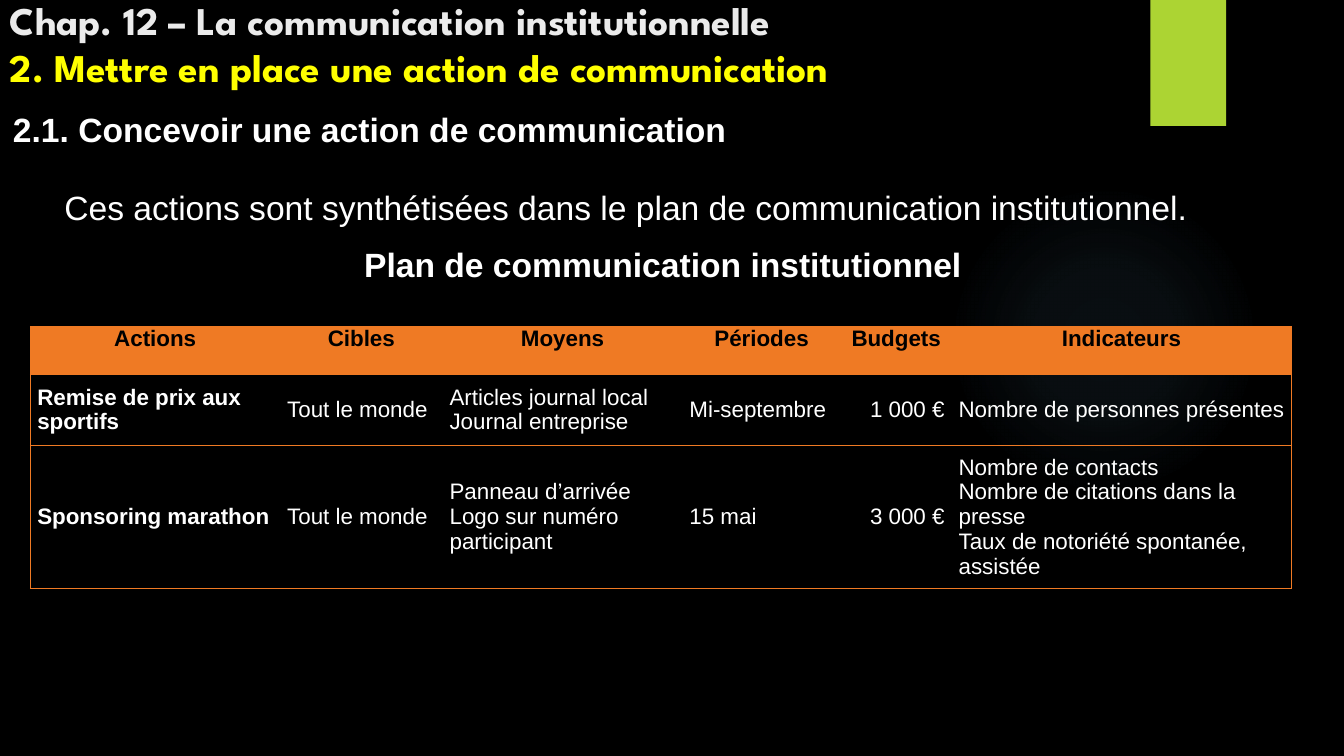
from lxml.etree import SubElement
from pptx import Presentation
from pptx.dml.color import RGBColor
from pptx.enum.shapes import MSO_SHAPE
from pptx.enum.text import MSO_ANCHOR, PP_ALIGN
from pptx.oxml import parse_xml
from pptx.oxml.ns import nsdecls, qn
from pptx.util import Inches, Pt

SLIDE_WIDTH, SLIDE_HEIGHT = Inches(13.33), Inches(7.5)
BLACK = RGBColor(0x00, 0x00, 0x00)
WHITE = RGBColor(0xFF, 0xFF, 0xFF)
PALE_GREY = RGBColor(0xEB, 0xEB, 0xEB)
YELLOW = RGBColor(0xFF, 0xFF, 0x00)
GREEN = RGBColor(0xAC, 0xD4, 0x33)
ORANGE = RGBColor(0xEF, 0x7A, 0x24)
GLOW_BLUE = RGBColor(0x7A, 0xC4, 0xF0)

GLOW_STOPS = [(0, 7), (36, 6), (69, 0)]
COLUMN_SHARES = [18.6, 12.08, 17.85, 11.78, 8.25, 25.28]
ROW_SHARES = [6.27, 9.47, 18.93]
BUDGET_COLUMN = 4
PLAN = [
    ["Actions", "Cibles", "Moyens", "Périodes", "Budgets", "Indicateurs"],
    ["Remise de prix aux sportifs", "Tout le monde",
     "Articles journal local\nJournal entreprise", "Mi-septembre", "1 000 €",
     "Nombre de personnes présentes"],
    ["Sponsoring marathon", "Tout le monde",
     "Panneau d’arrivée\nLogo sur numéro participant", "15 mai", "3 000 €",
     "Nombre de contacts\nNombre de citations dans la presse\n"
     "Taux de notoriété spontanée, assistée"],
]


def across(share):
    """Return a percentage of the slide's width."""
    return round(SLIDE_WIDTH * share / 100)


def down(share):
    """Return a percentage of the slide's height."""
    return round(SLIDE_HEIGHT * share / 100)


def area(left, top, width, height):
    """Turn shares of the slide into a position and a size."""
    return across(left), down(top), across(width), down(height)


def write(paragraph, text, size=24, font="Arial", color=WHITE, bold=False, align=PP_ALIGN.LEFT):
    """Add a formatted run to a paragraph."""
    paragraph.alignment = align
    run = paragraph.add_run()
    run.text = text
    run.font.size = Pt(size)
    run.font.name = font
    run.font.bold = bold
    run.font.color.rgb = color


def add_text_frame(slide, place, wrap=True, anchor=MSO_ANCHOR.TOP):
    """Add a text box and return its text frame."""
    text_frame = slide.shapes.add_textbox(*area(*place)).text_frame
    text_frame.word_wrap = wrap
    text_frame.vertical_anchor = anchor
    return text_frame


def add_plain_shape(slide, kind, place, color):
    """Add a filled shape with neither line nor shadow."""
    shape = slide.shapes.add_shape(kind, *area(*place))
    shape.shadow.inherit = False
    shape.line.fill.background()
    shape.fill.solid()
    shape.fill.fore_color.rgb = color
    return shape


def add_glow(slide):
    """Add the faint round glow."""
    shape = add_plain_shape(slide, MSO_SHAPE.OVAL, (70.59, 24.4, 23.11, 41.07), GLOW_BLUE)
    stops = "".join(
        f'<a:gs pos="{position * 1000}"><a:srgbClr val="{GLOW_BLUE}">'
        f'<a:alpha val="{alpha * 1000}"/></a:srgbClr></a:gs>'
        for position, alpha in GLOW_STOPS)
    gradient = parse_xml(
        f'<a:gradFill {nsdecls("a")}><a:gsLst>{stops}</a:gsLst><a:path path="circle">'
        '<a:fillToRect l="50000" t="50000" r="50000" b="50000"/></a:path></a:gradFill>')
    properties = shape.element.spPr
    properties.replace(properties.find(qn("a:solidFill")), gradient)


def set_borders(cell, visible_sides):
    """Draw the visible sides of a cell in orange and hide the others."""
    properties = cell._tc.get_or_add_tcPr()
    for side in "LRTB":
        line = SubElement(properties, qn(f"a:ln{side}"), w=str(Pt(0.75)))
        if side in visible_sides:
            fill = SubElement(line, qn("a:solidFill"))
            SubElement(fill, qn("a:srgbClr"), val=str(ORANGE))
        else:
            SubElement(line, qn("a:noFill"))


def fill_cell(cell, text, row, column):
    """Format one cell of the plan according to its row and column."""
    header = row == 0
    cell.margin_left = cell.margin_right = Inches(0.07)
    cell.margin_top = cell.margin_bottom = 0
    cell.vertical_anchor = MSO_ANCHOR.TOP if header else MSO_ANCHOR.MIDDLE
    left_side = "L" if column == 0 else ""
    right_side = "R" if column == len(COLUMN_SHARES) - 1 else ""
    set_borders(cell, left_side + right_side + ("T" if header else "TB"))
    if header:
        cell.fill.solid()
        cell.fill.fore_color.rgb = ORANGE
        align = PP_ALIGN.CENTER
    else:
        cell.fill.background()
        align = PP_ALIGN.RIGHT if column == BUDGET_COLUMN else PP_ALIGN.LEFT
    for index, line in enumerate(text.split("\n")):
        text_frame = cell.text_frame
        paragraph = text_frame.add_paragraph() if index else text_frame.paragraphs[0]
        write(paragraph, line, size=16, color=BLACK if header else WHITE,
              bold=header or column == 0, align=align)


def add_plan_table(slide):
    """Add the communication plan."""
    place = area(2.25, 43.2, sum(COLUMN_SHARES), sum(ROW_SHARES))
    table = slide.shapes.add_table(len(ROW_SHARES), len(COLUMN_SHARES), *place).table
    table.first_row = table.horz_banding = False
    for column, share in zip(table.columns, COLUMN_SHARES):
        column.width = across(share)
    for row, share in zip(table.rows, ROW_SHARES):
        row.height = down(share)
    for row, texts in enumerate(PLAN):
        for column, text in enumerate(texts):
            fill_cell(table.cell(row, column), text, row, column)


def add_title(slide):
    """Add the chapter and section titles."""
    title = add_text_frame(slide, (0, -1.07, 97.15, 13.73), anchor=MSO_ANCHOR.BOTTOM).paragraphs[0]
    style = {"size": 28, "font": "League Spartan", "bold": True}
    write(title, "Chap. 12 – La communication institutionnelle", color=PALE_GREY, **style)
    title.add_line_break()
    write(title, "2. Mettre en place une action de communication", color=YELLOW, **style)


def add_introduction(slide):
    """Add the sentence and the heading above the plan."""
    text_frame = add_text_frame(slide, (4.05, 24, 90.55, 14.4))
    sentence = text_frame.paragraphs[0]
    sentence.space_after = Pt(6)
    write(sentence, "Ces actions sont synthétisées dans le plan de communication institutionnel.")
    heading = text_frame.add_paragraph()
    heading.space_before = heading.space_after = Pt(6)
    write(heading, "Plan de communication institutionnel", bold=True, align=PP_ALIGN.CENTER)


def main():
    """Build and save the slide."""
    presentation = Presentation()
    presentation.slide_width, presentation.slide_height = SLIDE_WIDTH, SLIDE_HEIGHT
    slide = presentation.slides.add_slide(presentation.slide_layouts[6])
    slide.background.fill.solid()
    slide.background.fill.fore_color.rgb = BLACK
    add_glow(slide)
    add_plain_shape(slide, MSO_SHAPE.RECTANGLE, (85.6, 0, 5.63, 16.67), GREEN)
    add_title(slide)
    add_introduction(slide)
    add_plan_table(slide)
    subsection = add_text_frame(slide, (0.23, 13.73, 55.06, 6.67), wrap=False).paragraphs[0]
    write(subsection, "2.1. Concevoir une action de communication", bold=True,
          align=PP_ALIGN.JUSTIFY)
    presentation.save("out.pptx")


if __name__ == "__main__":
    main()
